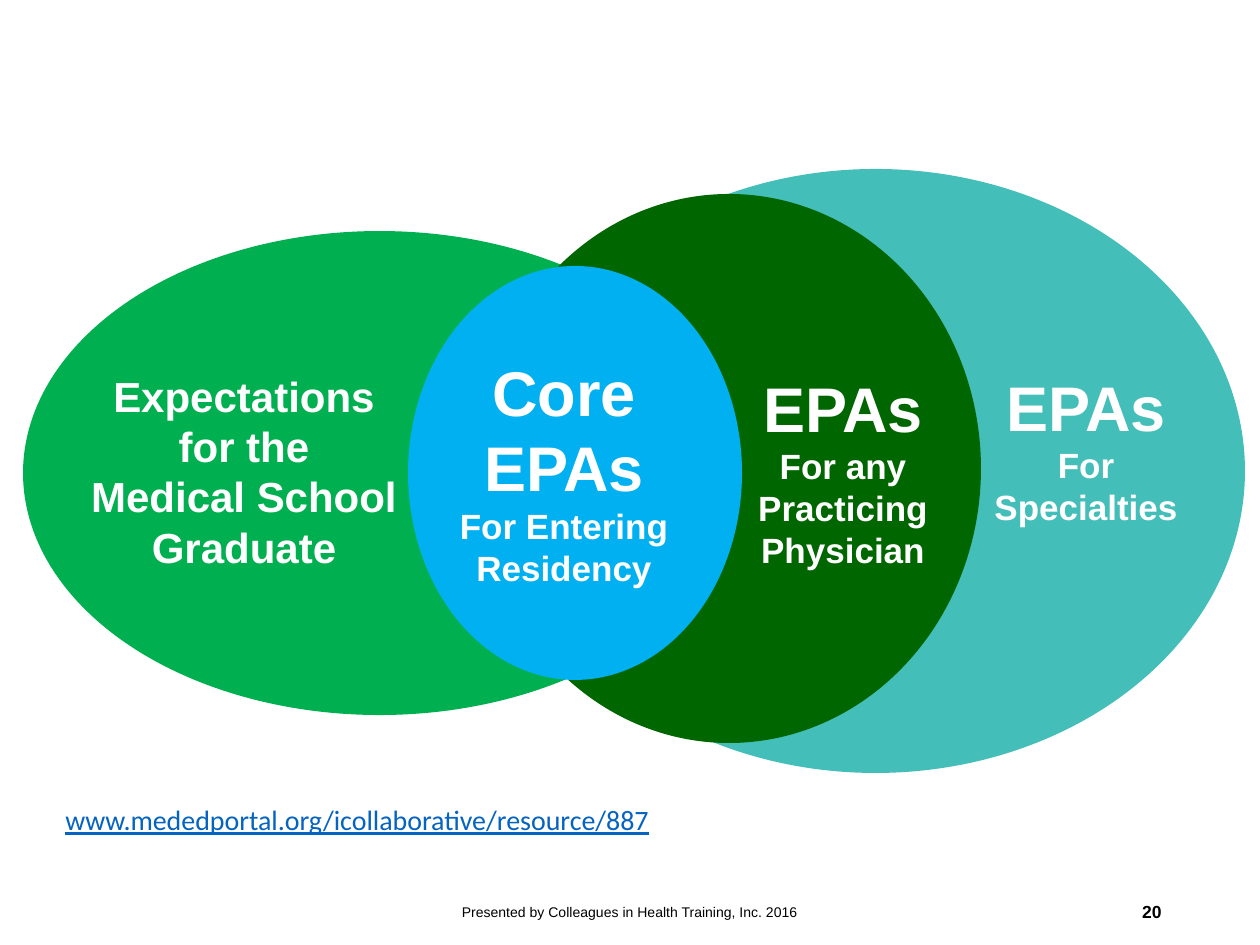
"""Build a slide of overlapping ellipses showing how EPAs relate across training stages."""
from pptx import Presentation
from pptx.dml.color import RGBColor
from pptx.enum.shapes import MSO_SHAPE as Shape
from pptx.enum.text import MSO_ANCHOR as Anchor, PP_ALIGN as Align
from pptx.util import Pt

EMU_PER_PX = 914400 / 126
THEME = {
    "green": "00B050", "teal": "43BEB9", "dark_green": "006600", "blue": "00B0F0",
    "white": "FFFFFF", "black": "000000", "link": "0563C1",
    "font": "Arial", "link_font": "Calibri",
    "title": 36, "heading": 24, "detail": 20, "link_size": 16, "number": 10, "footer": 8,
}


def px(*lengths):
    return [round(length * EMU_PER_PX) for length in lengths]


def add_text(page, bounds, lines, color, align=Align.CENTER, anchor=Anchor.TOP,
             font="font", bold=False, underline=False):
    box = page.shapes.add_textbox(*px(*bounds))
    frame = box.text_frame
    frame.word_wrap = True
    frame.vertical_anchor = anchor
    frame.text = "\n".join(text for text, size in lines)
    for para, (text, size) in zip(frame.paragraphs, lines):
        para.alignment = align
        for span in para.runs:
            span.font.name = THEME[font]
            span.font.size = Pt(THEME[size])
            span.font.bold = bold
            span.font.underline = underline
            span.font.color.rgb = RGBColor.from_string(THEME[color])


deck = Presentation()
deck.slide_width, deck.slide_height = px(1260, 945)
page = deck.slides.add_slide(deck.slide_layouts[6])

stages = [
    ("green", (23, 231, 713, 484), (6, 364, 476, 217),
     [("Expectations", "heading"), ("for the", "heading"),
      ("Medical School Graduate", "heading")]),
    ("teal", (506, 169, 739, 604), (926, 362, 320, 174),
     [("EPAs", "title"), ("For", "detail"), ("Specialties", "detail")]),
    ("dark_green", (477, 194, 504, 549), (683, 363, 320, 217),
     [("EPAs", "title"), ("For any Practicing Physician", "detail")]),
    ("blue", (408, 266, 334, 414), (404, 347, 320, 251),
     [("Core", "title"), ("EPAs", "title"), ("For Entering Residency", "detail")]),
]
for color, oval_bounds, text_bounds, lines in stages:
    oval = page.shapes.add_shape(Shape.OVAL, *px(*oval_bounds))
    oval.shadow.inherit = False
    oval.fill.solid()
    oval.fill.fore_color.rgb = RGBColor.from_string(THEME[color])
    oval.line.fill.background()
    add_text(page, text_bounds, lines, "white", bold=True)

add_text(page, (53, 796, 1149, 47),
         [("www.mededportal.org/icollaborative/resource/887", "link_size")],
         "link", align=Align.LEFT, font="link_font", underline=True)
add_text(page, (417, 887, 426, 50),
         [("Presented by Colleagues in Health Training, Inc. 2016", "footer")],
         "black", anchor=Anchor.MIDDLE)
add_text(page, (890, 887, 284, 50), [("20", "number")],
         "black", align=Align.RIGHT, anchor=Anchor.MIDDLE, bold=True)

deck.save("out.pptx")
